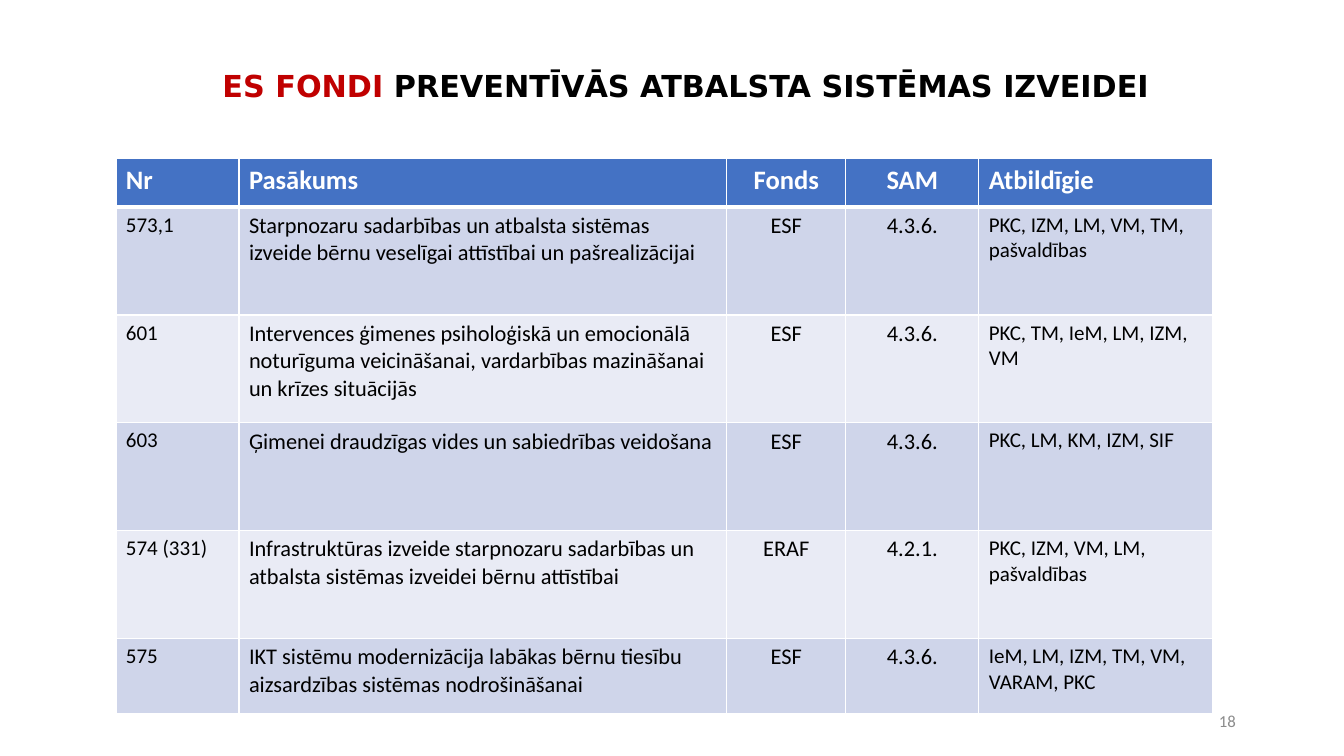
"""Build the slide on EU funds for a preventive support system."""
import pptx
import pptx.dml.color
import pptx.enum.text
import pptx.oxml
import pptx.oxml.ns
import pptx.util

Pt = pptx.util.Pt
ALIGN = pptx.enum.text.PP_ALIGN
ANCHOR = pptx.enum.text.MSO_ANCHOR


def style(font, size, color, bold=False, name="Calibri"):
    """Set the look of a font."""
    font.name, font.size, font.bold = name, Pt(size), bold
    font.color.rgb = pptx.dml.color.RGBColor.from_string(color)


def add_box(left, top, width, height, anchor, align):
    """Add a text box and return its first paragraph."""
    box = slide.shapes.add_textbox(Pt(left), Pt(top), Pt(width), Pt(height))
    frame = box.text_frame
    frame.word_wrap = True
    frame.vertical_anchor = anchor
    para = frame.paragraphs[0]
    para.alignment = align
    return para


deck = pptx.Presentation()
deck.slide_width, deck.slide_height = Pt(960), Pt(540)
slide = deck.slides.add_slide(deck.slide_layouts[6])

title = add_box(138.2, 20.9, 703.4, 56.9, ANCHOR.BOTTOM, ALIGN.CENTER)
title.line_spacing = 0.9
for text, color in (
    ("ES FONDI ", "C00000"),
    ("PREVENTĪVĀS ATBALSTA SISTĒMAS IZVEIDEI", "000000"),
):
    run = title.add_run()
    run.text = text
    style(run.font, 21.6, color, True, "DejaVu Sans")

number = add_box(673.9, 500.4, 216, 28.8, ANCHOR.MIDDLE, ALIGN.RIGHT)
number.text = "18"
style(number.font, 12, "8C8C8C")

rows = [
    ("Nr", "Pasākums", "Fonds", "SAM", "Atbildīgie"),
    ("573,1", "Starpnozaru sadarbības un atbalsta sistēmas izveide bērnu veselīgai attīstībai un pašrealizācijai",
     "ESF", "4.3.6.", "PKC, IZM, LM, VM, TM, pašvaldības"),
    ("601", "Intervences ģimenes psiholoģiskā un emocionālā noturīguma veicināšanai, vardarbības mazināšanai un krīzes situācijās",
     "ESF", "4.3.6.", "PKC, TM, IeM, LM, IZM, VM"),
    ("603", "Ģimenei draudzīgas vides un sabiedrības veidošana",
     "ESF", "4.3.6.", "PKC, LM, KM, IZM, SIF"),
    ("574 (331)", "Infrastruktūras izveide starpnozaru sadarbības un atbalsta sistēmas izveidei bērnu attīstībai",
     "ERAF", "4.2.1.", "PKC, IZM, VM, LM, pašvaldības"),
    ("575", "IKT sistēmu modernizācija labākas bērnu tiesību aizsardzības sistēmas nodrošināšanai",
     "ESF", "4.3.6.", "IeM, LM, IZM, TM, VM, VARAM, PKC"),
]
widths = [87.9, 348.5, 85, 95, 167.2]
heights = [34.6, 77, 77, 77, 77, 54]
sizes = [15, 16, 16, 16, 15]
aligns = [ALIGN.LEFT, ALIGN.LEFT, ALIGN.CENTER, ALIGN.CENTER, ALIGN.LEFT]

table = slide.shapes.add_table(
    len(rows), len(widths), Pt(82.8), Pt(113.4), Pt(sum(widths)), Pt(sum(heights))
).table
for column, width in zip(table.columns, widths):
    column.width = Pt(width)
for r, (texts, height) in enumerate(zip(rows, heights)):
    table.rows[r].height = Pt(height)
    head = r == 0
    fill = "4472C4" if head else ("E9EBF5", "CFD5EA")[r % 2]
    for c, text in enumerate(texts):
        cell = table.cell(r, c)
        props = cell._tc.get_or_add_tcPr()
        for side in "LRTB":
            thick = (side == "B" and r == 0) or (side == "T" and r == 1)
            props.append(pptx.oxml.parse_xml(
                f'<a:ln{side} {pptx.oxml.ns.nsdecls("a")} w="{Pt(3 if thick else 1)}">'
                f'<a:solidFill><a:srgbClr val="FFFFFF"/></a:solidFill></a:ln{side}>'
            ))
        cell.fill.solid()
        cell.fill.fore_color.rgb = pptx.dml.color.RGBColor.from_string(fill)
        para = cell.text_frame.paragraphs[0]
        para.text = text
        para.alignment = aligns[c]
        style(para.font, 19 if head else sizes[c], "FFFFFF" if head else "000000", head)

deck.save("out.pptx")
